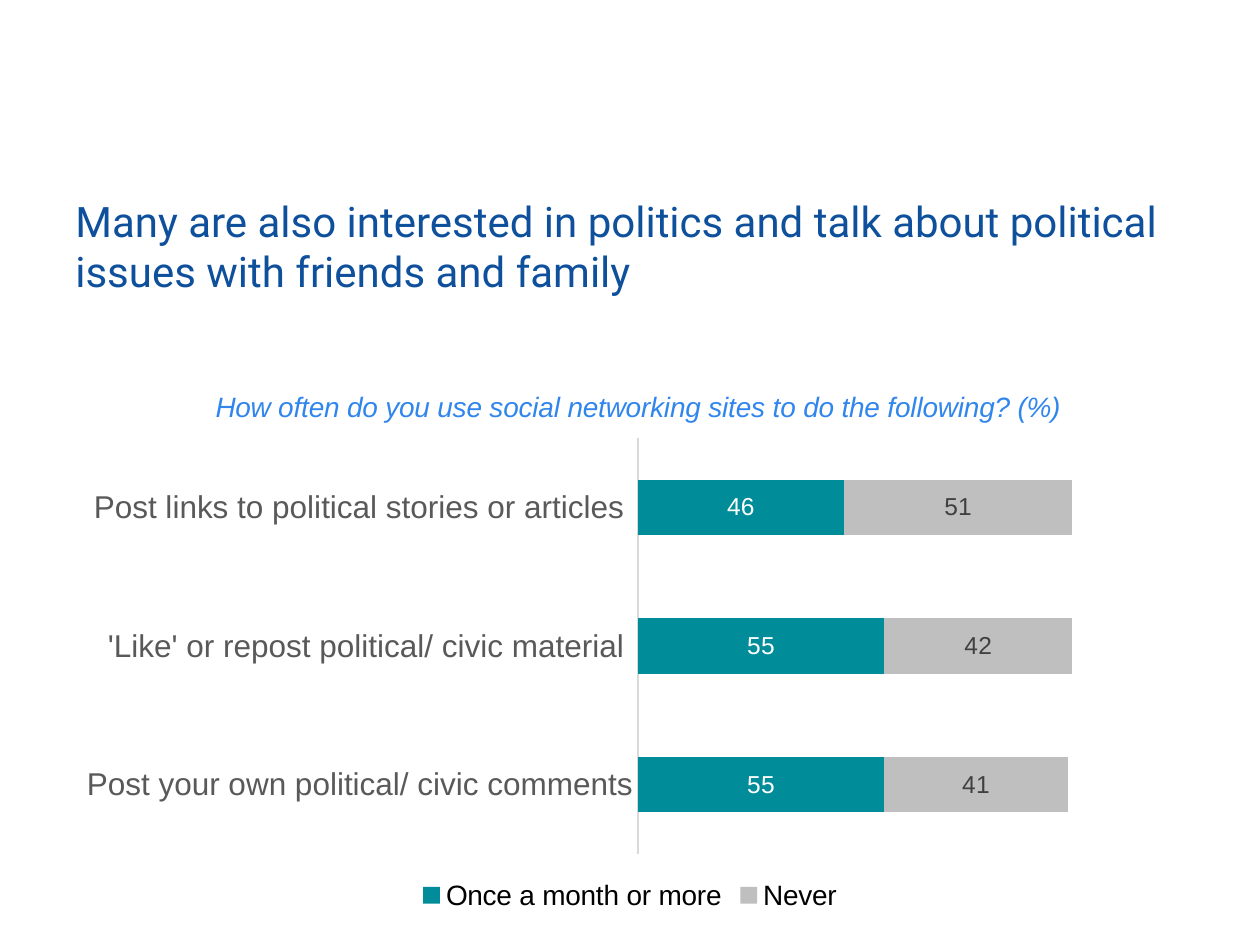
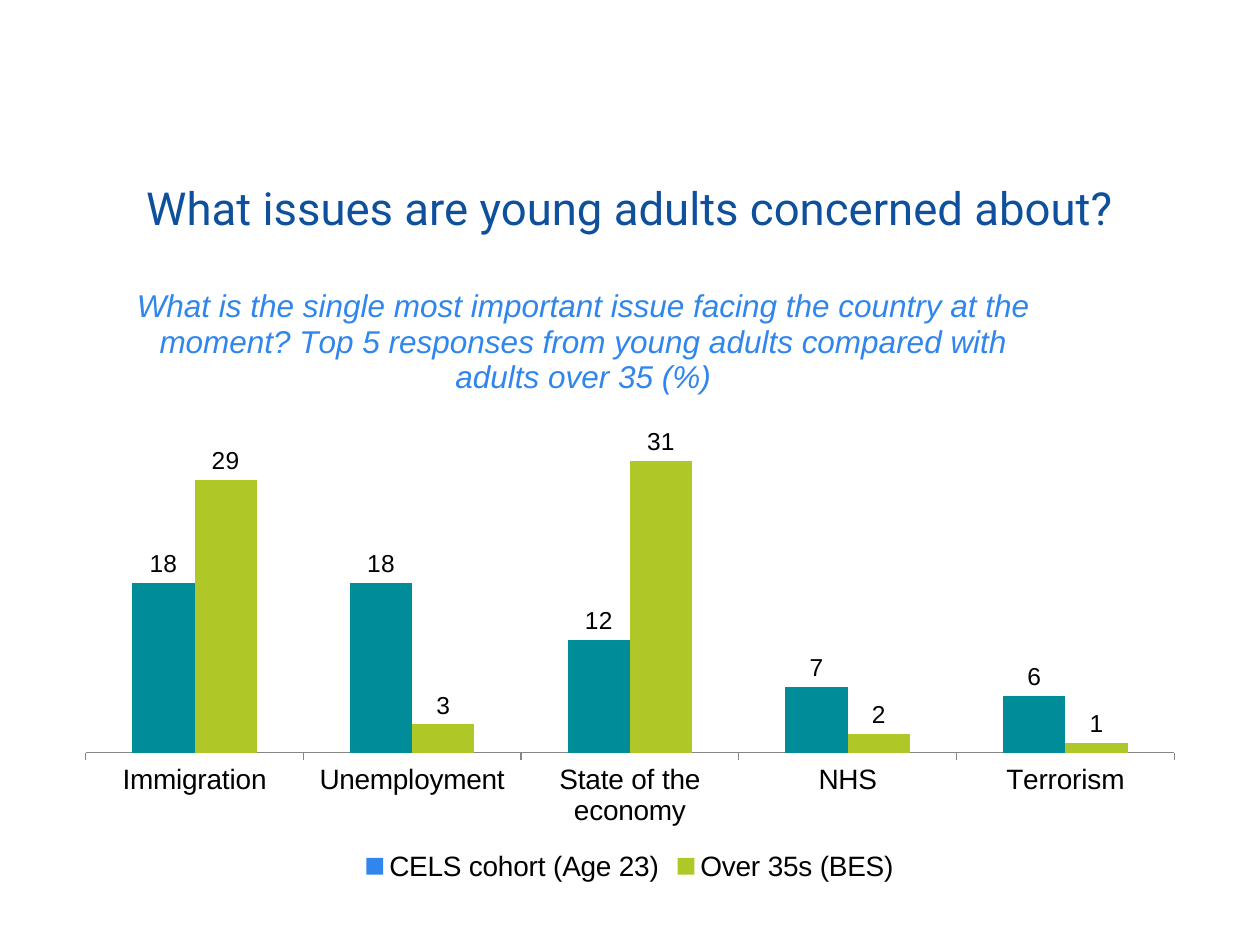
"""Build two survey slides, each with a heading and a bar chart."""
from dataclasses import dataclass

from lxml import etree
from pptx import Presentation
from pptx import util as u
from pptx.chart import data as chart_data
from pptx.dml.color import RGBColor
from pptx.enum import chart as charts
from pptx.enum import text
from pptx.oxml import ns

HEADING_BLUE = RGBColor(0x0F, 0x50, 0x9C)
QUESTION_BLUE = RGBColor(0x30, 0x86, 0xEC)
TEAL = RGBColor(0x00, 0x8C, 0x99)
LIME = RGBColor(0xAF, 0xC8, 0x28)
SILVER = RGBColor(0xBF, 0xBF, 0xBF)
AXIS_LIGHT = RGBColor(0xD9, 0xD9, 0xD9)
AXIS_GREY = RGBColor(0x86, 0x86, 0x86)
CATEGORY_GREY = RGBColor(0x59, 0x59, 0x59)
LABEL_GREY = RGBColor(0x40, 0x40, 0x40)
WHITE = RGBColor(0xFF, 0xFF, 0xFF)
BLACK = RGBColor(0x00, 0x00, 0x00)

HEADING_FONT = "Roboto"
CHART_FONT = "Arial"
LEFT, WIDTH = 0.5, 9


@dataclass(frozen=True)
class Heading:
    """Slide heading."""
    words: str
    top: float
    size: int
    align: text.PP_ALIGN


@dataclass(frozen=True)
class Series:
    """One set of bars with its colours; bars may differ from the legend key."""
    name: str
    values: tuple[int, ...]
    color: RGBColor
    label_color: RGBColor = BLACK
    bar_color: RGBColor | None = None


@dataclass(frozen=True)
class SurveyChart:
    """Bar chart of one survey question; layouts are fractions of the chart."""
    kind: charts.XL_CHART_TYPE
    top: float
    height: float
    question: str
    question_size: int
    question_layout: dict[str, float]
    plot_layout: dict[str, float]
    categories: tuple[str, ...]
    category_size: int
    category_color: RGBColor
    axis_color: RGBColor
    tick: charts.XL_TICK_MARK
    maximum: int
    overlap: int
    number_format: str
    label_position: charts.XL_LABEL_POSITION
    series: tuple[Series, ...]


SLIDES = (
    (
        Heading("Many are also interested in politics and talk about political "
                "issues with friends and family", 1.5, 24, text.PP_ALIGN.LEFT),
        SurveyChart(
            kind=charts.XL_CHART_TYPE.BAR_STACKED,
            top=2.87, height=4.4,
            question="How often do you use social networking sites to do the following? (%)",
            question_size=16,
            question_layout={"x": 0.13, "y": 0.04},
            plot_layout={"x": 0.507, "y": 0.138, "w": 0.474, "h": 0.75},
            categories=("Post your own political/ civic comments",
                        " 'Like' or repost political/ civic material ",
                        "Post links to political stories or articles "),
            category_size=18, category_color=CATEGORY_GREY,
            axis_color=AXIS_LIGHT, tick=charts.XL_TICK_MARK.NONE,
            maximum=120, overlap=100, number_format="###0",
            label_position=charts.XL_LABEL_POSITION.CENTER,
            series=(Series("Once a month or more", (55, 55, 46), TEAL, WHITE),
                    Series("Never", (41, 42, 51), SILVER, LABEL_GREY)),
        ),
    ),
    (
        Heading("What issues are young adults concerned about?", 1.38, 26,
                text.PP_ALIGN.CENTER),
        SurveyChart(
            kind=charts.XL_CHART_TYPE.COLUMN_CLUSTERED,
            top=2.17, height=4.87,
            question="What is the single most important issue facing the country at the "
                     "moment? Top 5 responses from young adults compared with adults "
                     "over 35 (%)",
            question_size=18,
            question_layout={"x": 0.06, "y": 0.01},
            plot_layout={"x": 0.02, "y": 0.244, "w": 0.96, "h": 0.537},
            categories=("Immigration", "Unemployment", "State of the economy",
                        "NHS", "Terrorism"),
            category_size=16, category_color=BLACK,
            axis_color=AXIS_GREY, tick=charts.XL_TICK_MARK.OUTSIDE,
            maximum=35, overlap=0, number_format="#,##0",
            label_position=charts.XL_LABEL_POSITION.OUTSIDE_END,
            series=(Series("CELS cohort (Age 23)", (18, 18, 12, 7, 6),
                           QUESTION_BLUE, bar_color=TEAL),
                    Series("Over 35s (BES)", (29, 3, 31, 2, 1), LIME)),
        ),
    ),
)


def style_font(font, size: int, color: RGBColor, name: str = CHART_FONT) -> None:
    """Set size, colour and typeface of a font."""
    font.size = u.Pt(size)
    font.color.rgb = color
    font.name = name


def paint(item, color: RGBColor) -> None:
    """Give a series or point a solid fill."""
    item.format.fill.solid()
    item.format.fill.fore_color.rgb = color


def set_layout(parent, index: int, fractions: dict[str, float], inner: bool) -> None:
    """Place a chart part by fractions of the chart area."""
    for old in parent.findall(ns.qn("c:layout")):
        parent.remove(old)
    layout = etree.Element(ns.qn("c:layout"))
    manual = etree.SubElement(layout, ns.qn("c:manualLayout"))
    settings = [("layoutTarget", "inner")] if inner else []
    settings += [("xMode", "edge"), ("yMode", "edge")]
    settings += [(key, str(value)) for key, value in fractions.items()]
    for tag, value in settings:
        etree.SubElement(manual, ns.qn(f"c:{tag}")).set("val", value)
    parent.insert(index, layout)


def add_heading(slide, heading: Heading) -> None:
    """Add the heading text to a slide."""
    box = slide.shapes.add_textbox(u.Inches(LEFT), u.Inches(heading.top),
                                   u.Inches(WIDTH), u.Inches(0.98))
    box.text_frame.word_wrap = True
    paragraph = box.text_frame.paragraphs[0]
    paragraph.alignment = heading.align
    run = paragraph.add_run()
    run.text = heading.words
    style_font(run.font, heading.size, HEADING_BLUE, HEADING_FONT)


def add_question(chart, survey: SurveyChart) -> None:
    """Add the survey question as chart title."""
    chart.has_title = True
    title = chart.chart_title
    run = title.text_frame.paragraphs[0].add_run()
    run.text = survey.question
    style_font(run.font, survey.question_size, QUESTION_BLUE)
    run.font.bold = False
    run.font.italic = True
    title.include_in_layout = False
    set_layout(title.element, 1, survey.question_layout, inner=False)


def style_axes(chart, survey: SurveyChart) -> None:
    """Style the category axis and hide the value axis."""
    category_axis = chart.category_axis
    category_axis.has_major_gridlines = False
    category_axis.major_tick_mark = survey.tick
    category_axis.minor_tick_mark = charts.XL_TICK_MARK.NONE
    category_axis.format.line.color.rgb = survey.axis_color
    category_axis.format.line.width = u.Pt(0.75)
    style_font(category_axis.tick_labels.font, survey.category_size,
               survey.category_color)
    value_axis = chart.value_axis
    value_axis.has_major_gridlines = False
    value_axis.minimum_scale = 0
    value_axis.maximum_scale = survey.maximum
    value_axis.visible = False


def style_series(plot, survey: SurveyChart) -> None:
    """Colour the bars and label their values."""
    plot.vary_by_categories = False
    plot.gap_width = 150
    plot.overlap = survey.overlap
    for series, entry in zip(plot.series, survey.series):
        paint(series, entry.color)
        series.invert_if_negative = False
        if entry.bar_color is not None:
            for index in range(len(entry.values)):
                paint(series.points[index], entry.bar_color)
        labels = series.data_labels
        labels.show_value = True
        labels.number_format = survey.number_format
        labels.number_format_is_linked = False
        labels.position = survey.label_position
        style_font(labels.font, 14, entry.label_color)


def add_survey_chart(slide, survey: SurveyChart) -> None:
    """Add a styled survey chart to a slide."""
    data = chart_data.CategoryChartData()
    data.categories = survey.categories
    for entry in survey.series:
        data.add_series(entry.name, entry.values)
    chart = slide.shapes.add_chart(
        survey.kind, u.Inches(LEFT), u.Inches(survey.top),
        u.Inches(WIDTH), u.Inches(survey.height), data).chart
    style_font(chart.font, 10, BLACK)
    add_question(chart, survey)
    style_axes(chart, survey)
    style_series(chart.plots[0], survey)
    plot_area = chart.element.find(f".//{ns.qn('c:plotArea')}")
    set_layout(plot_area, 0, survey.plot_layout, inner=True)
    chart.has_legend = True
    chart.legend.position = charts.XL_LEGEND_POSITION.BOTTOM
    chart.legend.include_in_layout = False
    style_font(chart.legend.font, 16, BLACK)


def main() -> None:
    """Build and save the presentation."""
    presentation = Presentation()
    presentation.slide_width = u.Inches(10)
    presentation.slide_height = u.Inches(7.5)
    for heading, survey in SLIDES:
        slide = presentation.slides.add_slide(presentation.slide_layouts[6])
        add_heading(slide, heading)
        add_survey_chart(slide, survey)
    presentation.save("out.pptx")


if __name__ == "__main__":
    main()
